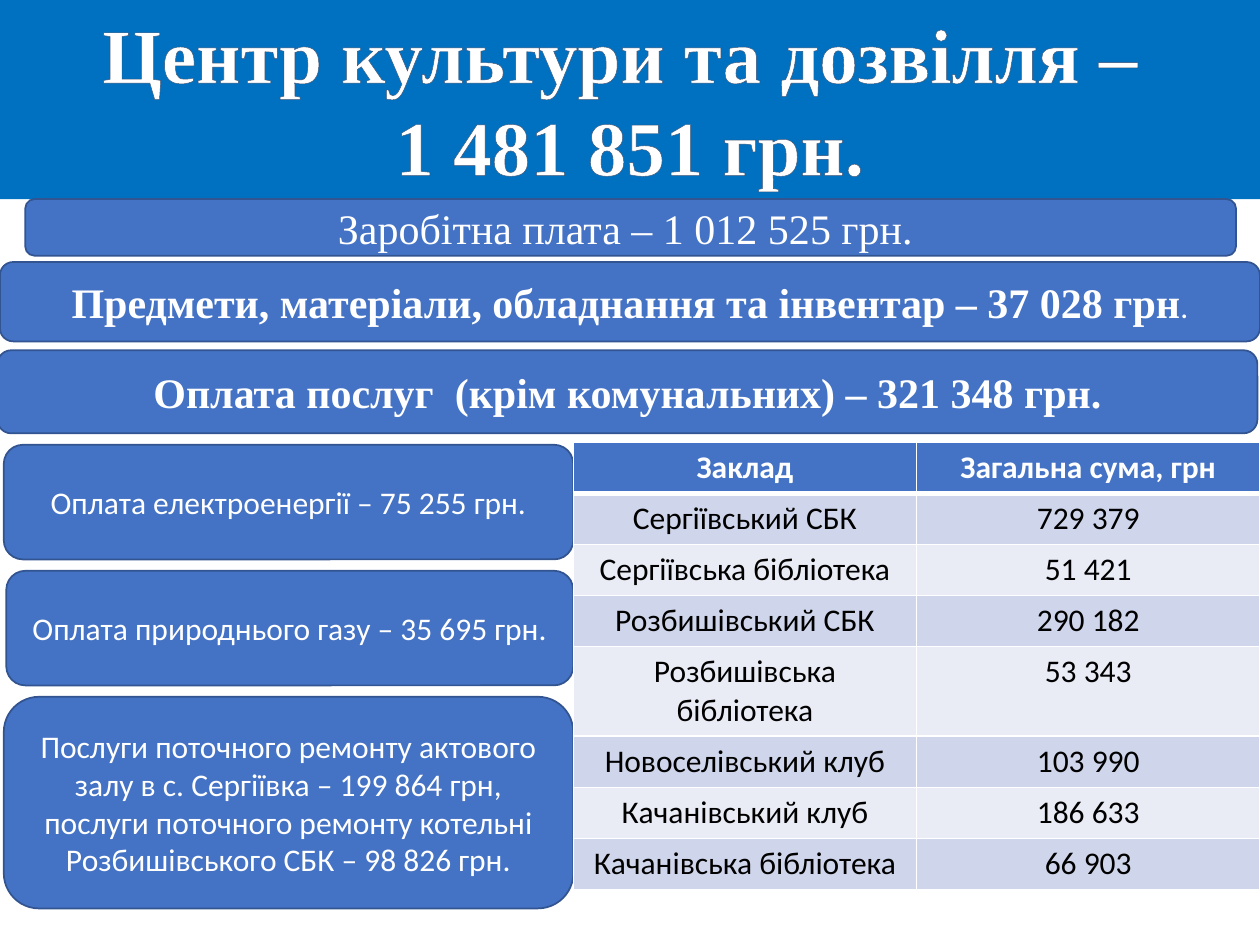
from lxml import etree
from pptx import Presentation
from pptx.dml.color import RGBColor
from pptx.enum.shapes import MSO_SHAPE
from pptx.enum.text import MSO_ANCHOR, PP_ALIGN
from pptx.oxml.ns import qn
from pptx.util import Inches, Pt

RECT, ROUND = MSO_SHAPE.RECTANGLE, MSO_SHAPE.ROUNDED_RECTANGLE
TOP, MIDDLE = MSO_ANCHOR.TOP, MSO_ANCHOR.MIDDLE
CENTER = PP_ALIGN.CENTER

WHITE = RGBColor(0xFF, 0xFF, 0xFF)
BLACK = RGBColor(0, 0, 0)
SKY = RGBColor(0x00, 0x70, 0xC0)
BLUE = RGBColor(0x44, 0x72, 0xC4)
EDGE = RGBColor(0x32, 0x54, 0x91)
INK = RGBColor(0x3A, 0x52, 0x74)
BANDS = RGBColor(0xCF, 0xD5, 0xEA), RGBColor(0xE9, 0xEB, 0xF5)

BODY = {"name": "Calibri", "size": Pt(18), "bold": False}
PLAIN = {"name": "Times New Roman", "size": Pt(24), "bold": False}
STRONG = {**PLAIN, "bold": True}
HUGE = {**STRONG, "size": Pt(44)}

WIDE, HIGH = 10, 7.5
SPLIT, FIRST, PITCH, GAP = 4.55, 3.53, 1, 0.09
HEAD = 1.58
GRID, ROW = 3.51, 0.405

TITLE = ["Центр культури та дозвілля – ", "1 481 851 грн."]
BARS = [
    (0.2, HEAD, 9.61, 0.45, [("Заробітна плата – 1 012 525 грн. ", PLAIN)]),
    (0, 2.08, WIDE, 0.63, [
        ("Предмети, матеріали, обладнання та інвентар – 37 028 грн", STRONG),
        (".", BODY)]),
    (-0.02, 2.78, WIDE, 0.66,
     [("Оплата послуг  (крім комунальних) – 321 348 грн.", STRONG)]),
]
CARDS = [
    (0.03, 1, "Оплата електроенергії – 75 255 грн."),
    (0.05, 1, "Оплата природнього газу – 35 695 грн."),
    (0.03, 1.77, "Послуги поточного ремонту актового залу в с. Сергіївка – "
     "199 864 грн, послуги поточного ремонту котельні "
     "Розбишівського СБК – 98 826 грн."),
]
SUMS = [
    ("Заклад", "Загальна сума, грн"),
    ("Сергіївський СБК", "729 379"),
    ("Сергіївська бібліотека", "51 421"),
    ("Розбишівський СБК", "290 182"),
    ("Розбишівська бібліотека", "53 343"),
    ("Новоселівський клуб", "103 990"),
    ("Качанівський клуб", "186 633"),
    ("Качанівська бібліотека", "66 903"),
]


def stroke(parent, tag, color, width):
    line = etree.SubElement(parent, qn(tag), w=str(Pt(width)))
    fill = etree.SubElement(line, qn("a:solidFill"))
    etree.SubElement(fill, qn("a:srgbClr"), val=str(color))
    return line


def write(frame, lines, color=WHITE):
    for i, runs in enumerate(lines):
        para = frame.add_paragraph() if i else frame.paragraphs[0]
        para.alignment = CENTER
        for text, style in runs:
            run = para.add_run()
            run.text = text
            for key, value in style.items():
                setattr(run.font, key, value)
            run.font.color.rgb = color


def box(slide, kind, place, lines, fill, edge=None, anchor=MIDDLE):
    shape = slide.shapes.add_shape(kind, *map(Inches, place))
    shape.shadow.inherit = False
    shape.fill.solid()
    shape.fill.fore_color.rgb = fill
    if edge is None:
        shape.line.fill.background()
    else:
        shape.line.color.rgb = edge
        shape.line.width = Pt(1)
    frame = shape.text_frame
    frame.word_wrap = True
    frame.vertical_anchor = anchor
    write(frame, lines)
    return shape


def fill_table(slide):
    width = WIDE - SPLIT
    place = SPLIT, GRID, width, ROW * len(SUMS)
    table = slide.shapes.add_table(
        len(SUMS), len(SUMS[0]), *map(Inches, place)).table
    for r, row in enumerate(SUMS):
        for c, text in enumerate(row):
            cell = table.cell(r, c)
            head = r == 0
            write(cell.text_frame, [[(text, {**BODY, "bold": head})]],
                  WHITE if head else BLACK)
            props = cell._tc.get_or_add_tcPr()
            for side in "LRTB":
                thick = (head and side == "B") or (r == 1 and side == "T")
                stroke(props, "a:ln" + side, WHITE, 3 if thick else 1)
            cell.fill.solid()
            cell.fill.fore_color.rgb = BLUE if head else BANDS[(r - 1) % 2]


def main():
    deck = Presentation()
    deck.slide_width, deck.slide_height = Inches(WIDE), Inches(HIGH)
    slide = deck.slides.add_slide(deck.slide_layouts[6])

    title = box(slide, RECT, (0, 0, WIDE, HEAD),
                [[(text, HUGE)] for text in TITLE], SKY, anchor=TOP)
    for para in title.text_frame.paragraphs:
        for run in para.runs:
            props = run._r.get_or_add_rPr()
            props.insert(0, stroke(props, "a:ln", INK, 1))

    for *place, runs in BARS:
        box(slide, ROUND, place, [runs], BLUE, EDGE)
    for i, (left, span, text) in enumerate(CARDS):
        place = left, FIRST + i * PITCH, SPLIT - left, span * PITCH - GAP
        box(slide, ROUND, place, [[(text, BODY)]], BLUE, EDGE)
    fill_table(slide)
    deck.save("out.pptx")


if __name__ == "__main__":
    main()
